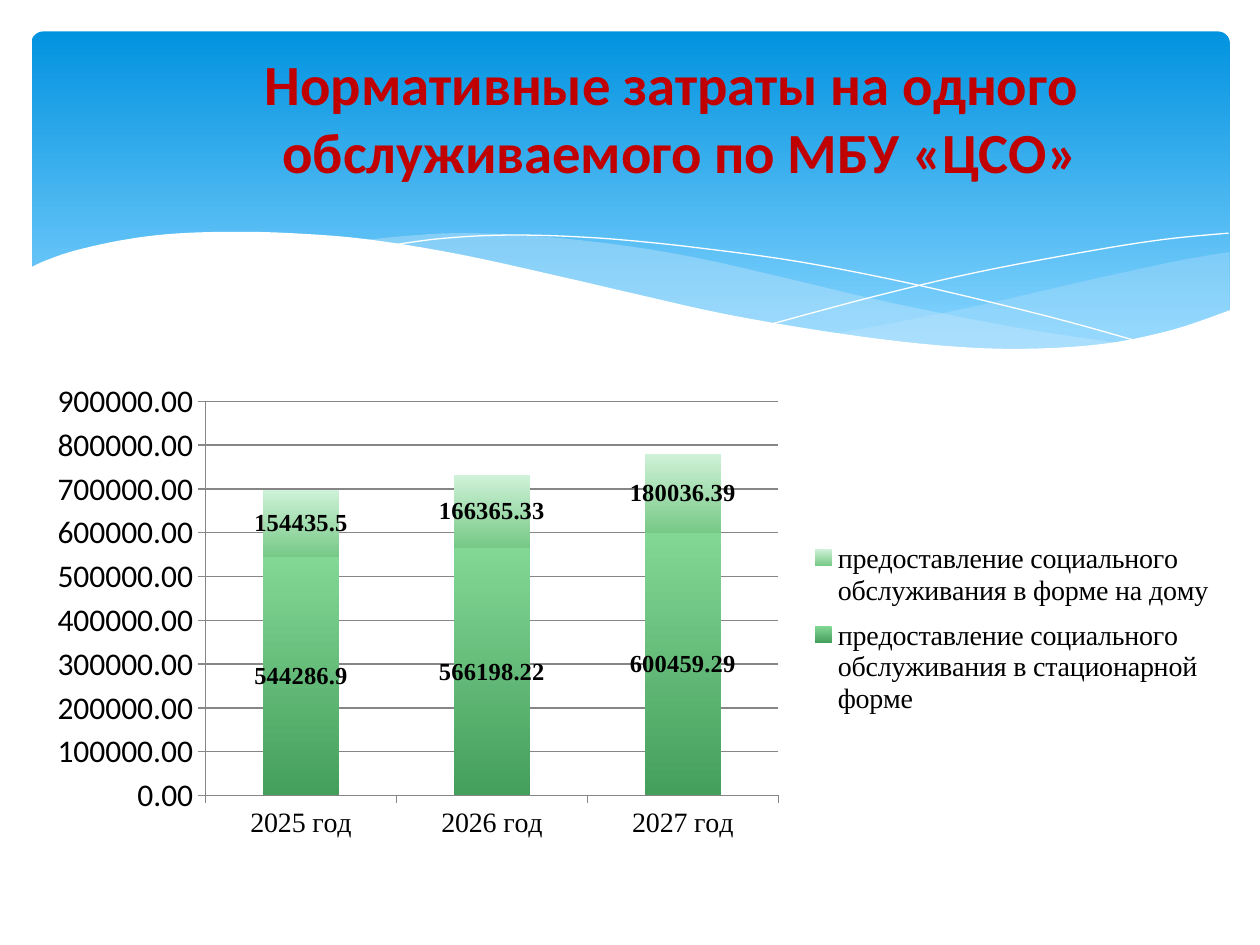
from dataclasses import dataclass
from typing import Optional

from lxml.etree import SubElement
from pptx import Presentation
from pptx.chart.data import CategoryChartData
from pptx.dml.color import RGBColor
from pptx.enum.chart import XL_CHART_TYPE, XL_LABEL_POSITION, XL_LEGEND_POSITION, XL_TICK_MARK
from pptx.enum.shapes import MSO_SHAPE
from pptx.enum.text import MSO_ANCHOR, PP_ALIGN
from pptx.oxml import parse_xml
from pptx.oxml.ns import nsdecls, qn
from pptx.util import Pt

COLORS = {
    "sky_top": "0293E0", "sky_bottom": "83D3FE", "haze": "C6E7FC",
    "white": "FFFFFF", "title": "C00000", "text": "000000", "grid": "868686",
    "ward_top": "83D795", "ward_bottom": "459F5C",
    "home_top": "CFF2D8", "home_bottom": "77C987",
}
SANS, SERIF = "Calibri", "Times New Roman"

Point = tuple[float, float]


@dataclass(frozen=True)
class Wave:
    """Edges are smoothed one by one, so corners stay sharp where they meet."""
    edges: list[list[Point]]
    fill: Optional[str] = None
    opacity: int = 100


@dataclass(frozen=True)
class Service:
    name: str
    costs: tuple[float, ...]
    top: str
    bottom: str


WAVES = [
    Wave([[(702.7, 144), (673.2, 149), (619.9, 160.6), (560.9, 174.2), (508.3, 185), (475.9, 190.8)],
          [(475.9, 190.8), (517.7, 195.8), (553.7, 199.4), (586, 200.2), (621.4, 198),
           (651.6, 193.7), (678.2, 186.5), (702.7, 177.8)]], "haze", 29),
    Wave([[(643, 196.6), (581, 187.2), (508.3, 172.8), (452.9, 159.8), (399.6, 147.6),
           (352, 139.7), (302.4, 134.6), (260, 133.2), (225.4, 135.4), (206, 137.5)],
          [(206, 137.5), (246.2, 143.3), (290.9, 151.9), (323.3, 159.8), (381.6, 172.8),
           (432.7, 183.6), (489.6, 193), (538.6, 198.7), (581, 200.2), (610.6, 199.4),
           (643, 196.6)]], "haze", 40),
    Wave([[(222.5, 140.4), (247.7, 136.8), (278.6, 134.6), (311.8, 134.6), (352, 136.8),
           (400.3, 141.8), (457.9, 149.8), (523.4, 162.7), (598.3, 180.7), (653, 195.8)]]),
    Wave([[(441.4, 185), (500.4, 169.2), (558.7, 155.5), (623.5, 143.3), (665.3, 136.8), (702, 133.2)]]),
    Wave([[(703.4, 177.1), (669.6, 188.6), (630, 196.6), (582.5, 199.4), (535.7, 197.3),
           (481, 190.8), (416.9, 180), (362.2, 167.8), (321.8, 158.4), (262.8, 145.4),
           (210.2, 136.8), (165.6, 133.2), (127.4, 132.5), (95, 133.9), (68.4, 137.5),
           (42.5, 143.3), (25.9, 149), (16.6, 153.4)],
          [(16.6, 236.9), (703.4, 236.9)]], "white"),
]
YEARS = ["2025 год", "2026 год", "2027 год"]
SERVICES = [
    Service("предоставление социального обслуживания в стационарной форме",
            (544286.9, 566198.22, 600459.29), "ward_top", "ward_bottom"),
    Service("предоставление социального обслуживания в форме на дому",
            (154435.5, 166365.33, 180036.39), "home_top", "home_bottom"),
]


def rgb(key: str) -> RGBColor:
    return RGBColor.from_string(COLORS[key])


def set_font(font, size: float, name: str, color: str = "text", bold: bool = False) -> None:
    font.size, font.name, font.bold = Pt(size), name, bold
    font.color.rgb = rgb(color)


def fill_down(fill, top: str, bottom: str, end: float = 1.0) -> None:
    """Vertical gradient from top to bottom, finished at the fraction end."""
    fill.gradient()
    fill.gradient_angle = 270
    for stop, key, position in zip(fill.gradient_stops, (top, bottom), (0, end)):
        stop.color.rgb = rgb(key)
        stop.position = position


def smooth(knots: list[Point], steps: int = 5) -> list[Point]:
    """Catmull-Rom curve through the knots."""
    if len(knots) < 3:
        return knots
    padded = [knots[0], *knots, knots[-1]]
    curve = [knots[0]]
    for a, b, c, d in zip(padded, padded[1:], padded[2:], padded[3:]):
        for step in range(1, steps + 1):
            t = step / steps
            curve.append(tuple(
                (2 * q + (r - p) * t + (2 * p - 5 * q + 4 * r - s) * t ** 2
                 + (3 * q - p - 3 * r + s) * t ** 3) / 2
                for p, q, r, s in zip(a, b, c, d)))
    return curve


def draw_sky(slide) -> None:
    sky = slide.shapes.add_shape(MSO_SHAPE.ROUNDED_RECTANGLE, Pt(18), Pt(18), Pt(684.7), Pt(194.4))
    sky.adjustments[0] = 0.034
    sky.shadow.inherit = False
    sky.line.fill.background()
    fill_down(sky.fill, "sky_top", "sky_bottom", 0.9)


def draw_wave(slide, wave: Wave) -> None:
    start, *rest = [(Pt(x), Pt(y)) for edge in wave.edges for x, y in smooth(edge)]
    builder = slide.shapes.build_freeform(*start)
    builder.add_line_segments(rest, close=wave.fill is not None)
    shape = builder.convert_to_shape()
    shape.shadow.inherit = False
    if wave.fill is None:
        shape.fill.background()
        shape.line.color.rgb = rgb("white")
        shape.line.width = Pt(0)
        return
    shape.line.fill.background()
    shape.fill.solid()
    shape.fill.fore_color.rgb = rgb(wave.fill)
    if wave.opacity < 100:
        color = shape.fill._xPr.find(qn("a:solidFill"))[0]
        SubElement(color, qn("a:alpha"), val=str(wave.opacity * 1000))


def draw_title(slide) -> None:
    frame = slide.shapes.add_textbox(Pt(100), Pt(21.6), Pt(523.2), Pt(90)).text_frame
    frame.word_wrap = True
    frame.vertical_anchor = MSO_ANCHOR.MIDDLE
    lines = ("Нормативные затраты на одного", "обслуживаемого по МБУ «ЦСО»")
    for index, line in enumerate(lines):
        paragraph = frame.add_paragraph() if index else frame.paragraphs[0]
        paragraph.alignment = PP_ALIGN.RIGHT
        run = paragraph.add_run()
        run.text = line
        set_font(run.font, 32.4, SANS, "title", bold=True)


def layout(x: float, y: float, w: float, h: float, inner: bool = False):
    """Manual chart layout in fractions of the chart area."""
    target = '<c:layoutTarget val="inner"/>' if inner else ""
    return parse_xml(
        f'<c:layout {nsdecls("c")}><c:manualLayout>{target}'
        '<c:xMode val="edge"/><c:yMode val="edge"/>'
        f'<c:x val="{x}"/><c:y val="{y}"/><c:w val="{w}"/><c:h val="{h}"/>'
        '</c:manualLayout></c:layout>')


def replace_layout(parent, new_layout, index: int) -> None:
    for old in parent.findall(qn("c:layout")):
        parent.remove(old)
    parent.insert(index, new_layout)


def draw_costs(slide) -> None:
    data = CategoryChartData(number_format="General")
    data.categories = YEARS
    for service in SERVICES:
        data.add_series(service.name, service.costs)
    chart = slide.shapes.add_chart(XL_CHART_TYPE.COLUMN_STACKED, Pt(20.2), Pt(213.1),
                                   Pt(680.4), Pt(271.4), data).chart
    set_font(chart.font, 18, SANS)
    chart.has_title = False

    plot = chart.plots[0]
    plot.gap_width, plot.overlap, plot.vary_by_categories = 150, 100, False
    for series, service in zip(plot.series, SERVICES):
        fill_down(series.format.fill, service.top, service.bottom)
        labels = series.data_labels
        labels.show_value = True
        labels.position = XL_LABEL_POSITION.CENTER
        set_font(labels.font, 14, SERIF, bold=True)

    years, costs = chart.category_axis, chart.value_axis
    set_font(years.tick_labels.font, 16, SERIF)
    costs.minimum_scale, costs.maximum_scale, costs.major_unit = 0, 900000, 100000
    costs.tick_labels.number_format = "0.00"
    costs.tick_labels.number_format_is_linked = False
    costs.has_major_gridlines = True
    for axis in (years, costs):
        axis.major_tick_mark = XL_TICK_MARK.OUTSIDE
        axis.format.line.color.rgb = rgb("grid")
    costs.major_gridlines.format.line.color.rgb = rgb("grid")

    chart.has_legend = True
    legend = chart.legend
    legend.position = XL_LEGEND_POSITION.RIGHT
    legend.include_in_layout = False
    set_font(legend.font, 16, SERIF)
    replace_layout(legend._element, layout(0.65, 0.33, 0.34, 0.42), 1)
    replace_layout(plot._element.getparent(), layout(0.143, 0.06, 0.481, 0.83, inner=True), 0)


def main() -> None:
    deck = Presentation()
    deck.slide_width, deck.slide_height = Pt(720), Pt(540)
    slide = deck.slides.add_slide(deck.slide_layouts[6])
    draw_sky(slide)
    for wave in WAVES:
        draw_wave(slide, wave)
    draw_costs(slide)
    draw_title(slide)
    deck.save("out.pptx")


if __name__ == "__main__":
    main()
